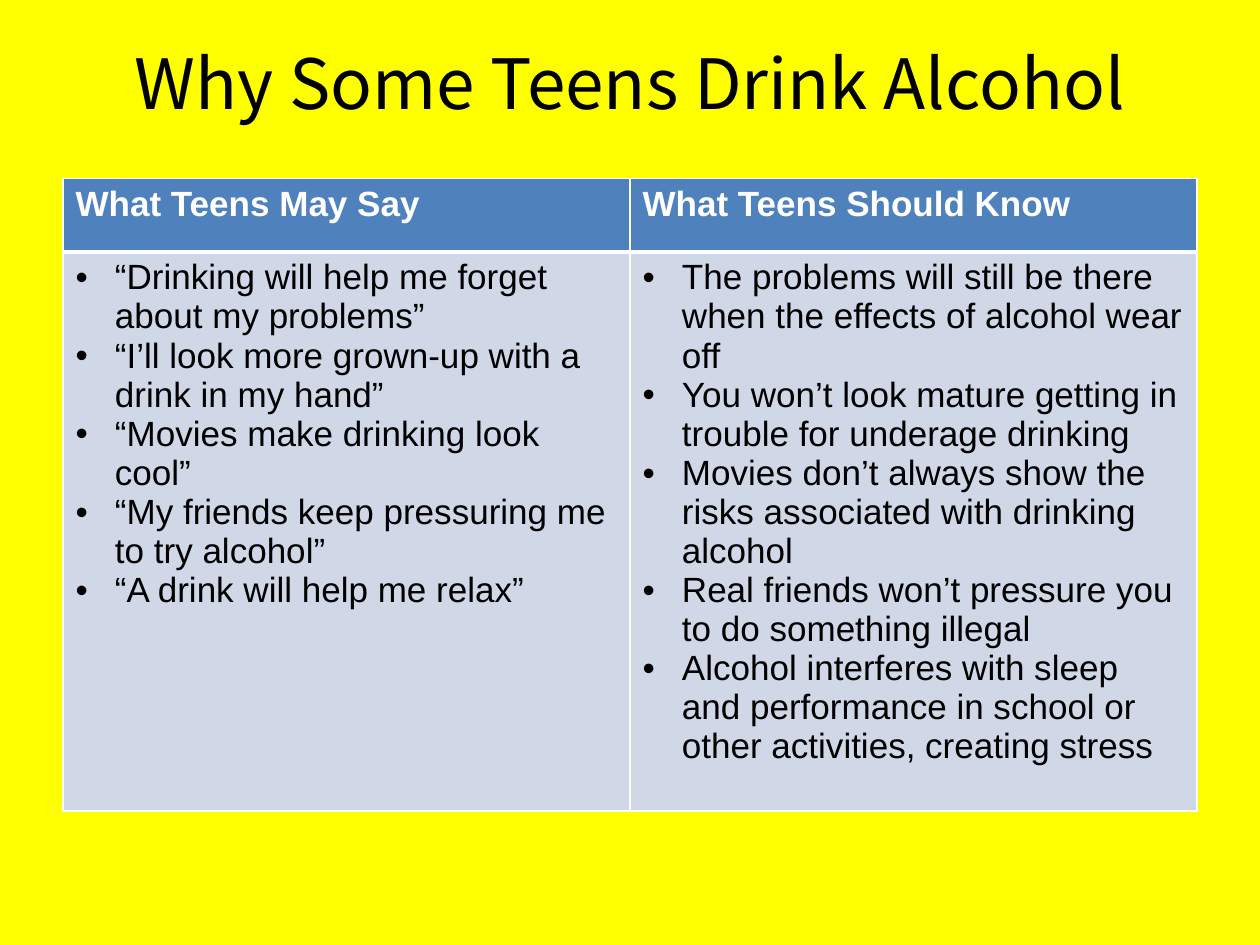
from dataclasses import dataclass

from lxml.etree import SubElement
from pptx import Presentation
from pptx.dml.color import RGBColor
from pptx.enum.text import MSO_ANCHOR, PP_ALIGN
from pptx.oxml.ns import qn
from pptx.util import Pt


@dataclass(frozen=True)
class Theme:
    background: str = "FFFF00"
    header_fill: str = "4F81BD"
    body_fill: str = "D0D8E8"
    dark: str = "000000"
    light: str = "FFFFFF"
    title_font: str = "Noto Sans CJK KR"
    table_font: str = "Arial"
    title_size: float = 39.6
    table_size: float = 20


THEME = Theme()
BULLET_INDENT = 22.5
THIN, THICK = 1, 3

COLUMNS = {
    "What Teens May Say": [
        "“Drinking will help me forget about my problems”",
        "“I’ll look more grown-up with a drink in my hand”",
        "“Movies make drinking look cool”",
        "“My friends keep pressuring me to try alcohol”",
        "“A drink will help me relax”",
    ],
    "What Teens Should Know": [
        "The problems will still be there when the effects of alcohol wear off",
        "You won’t look mature getting in trouble for underage drinking",
        "Movies don’t always show the risks associated with drinking alcohol",
        "Real friends won’t pressure you to do something illegal",
        "Alcohol interferes with sleep and performance in school or other activities, creating stress",
    ],
}


def style_text(paragraph, font_name, size, color, bold=False):
    for run in paragraph.runs:
        font = run.font
        font.name, font.size, font.bold = font_name, Pt(size), bold
        font.color.rgb = RGBColor.from_string(color)


def style_cell(cell, fill, top, bottom):
    """Fill the cell and draw its four borders; top and bottom are widths in points."""
    cell.fill.solid()
    cell.fill.fore_color.rgb = RGBColor.from_string(fill)
    properties = cell._tc.get_or_add_tcPr()
    borders = {"a:lnL": THIN, "a:lnR": THIN, "a:lnT": top, "a:lnB": bottom}
    for position, (tag, width) in enumerate(borders.items()):
        line = SubElement(properties, qn(tag), w=str(Pt(width)))
        line_fill = SubElement(line, qn("a:solidFill"))
        SubElement(line_fill, qn("a:srgbClr"), val=THEME.light)
        properties.insert(position, line)


presentation = Presentation()
presentation.slide_width, presentation.slide_height = Pt(720), Pt(540)
slide = presentation.slides.add_slide(presentation.slide_layouts[6])
slide.background.fill.solid()
slide.background.fill.fore_color.rgb = RGBColor.from_string(THEME.background)

title = slide.shapes.add_textbox(Pt(18), Pt(12.24), Pt(684), Pt(68.4))
title_frame = title.text_frame
title_frame.word_wrap = True
title_frame.vertical_anchor = MSO_ANCHOR.MIDDLE
title_frame.text = "Why Some Teens Drink Alcohol"
title_paragraph = title_frame.paragraphs[0]
title_paragraph.alignment = PP_ALIGN.CENTER
style_text(title_paragraph, THEME.title_font, THEME.title_size, THEME.dark)

table = slide.shapes.add_table(
    2, len(COLUMNS), Pt(36), Pt(102), Pt(648), Pt(337)
).table
table.rows[0].height, table.rows[1].height = Pt(42), Pt(295)

for column, (heading, points) in enumerate(COLUMNS.items()):
    header = table.cell(0, column)
    header.text_frame.text = heading
    style_cell(header, THEME.header_fill, THIN, THICK)
    style_text(header.text_frame.paragraphs[0], THEME.table_font, THEME.table_size, THEME.light, bold=True)

    body = table.cell(1, column)
    body.text_frame.text = "\n".join(points)
    style_cell(body, THEME.body_fill, THICK, THIN)
    for paragraph in body.text_frame.paragraphs:
        style_text(paragraph, THEME.table_font, THEME.table_size, THEME.dark)
        properties = paragraph._p.get_or_add_pPr()
        properties.set("marL", str(Pt(BULLET_INDENT)))
        properties.set("indent", str(-Pt(BULLET_INDENT)))
        SubElement(properties, qn("a:buFont"), typeface=THEME.table_font)
        SubElement(properties, qn("a:buChar"), char="•")

presentation.save("out.pptx")
